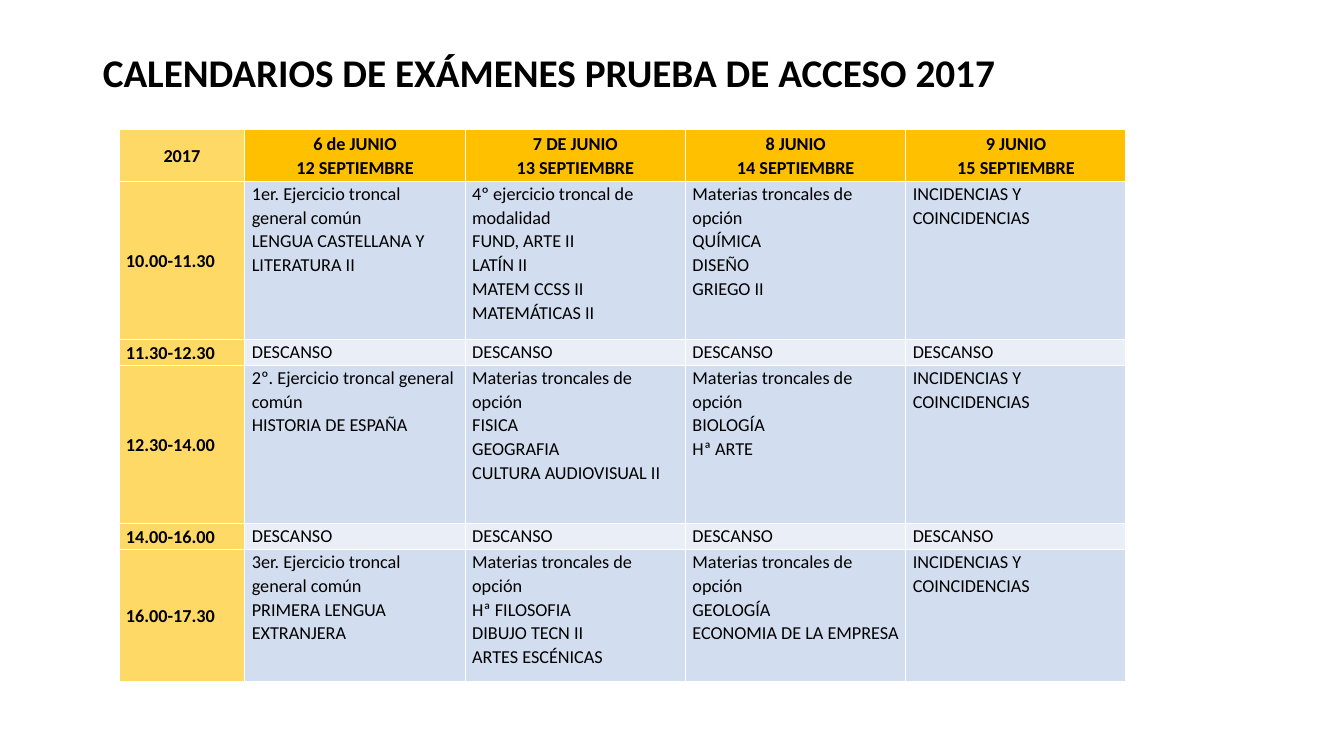
"""Build the 2017 exam calendar slide."""
from pptx import Presentation, util as u
from pptx.dml.color import RGBColor
from pptx.enum import text

HEADING = "CALENDARIOS DE EXÁMENES PRUEBA DE ACCESO 2017"
OPTION = "Materias troncales de opción"
INCIDENTS = ["INCIDENCIAS Y COINCIDENCIAS"]
BREAK = [["DESCANSO"]] * 4
DAYS = [
    ["6 de JUNIO", "12 SEPTIEMBRE"],
    ["7 DE JUNIO", "13 SEPTIEMBRE"],
    ["8 JUNIO", "14 SEPTIEMBRE"],
    ["9 JUNIO", "15 SEPTIEMBRE"],
]
CALENDAR = [
    ("2017", 2, DAYS),
    ("10.00-11.30", 6, [
        ["1er. Ejercicio troncal general común", "LENGUA CASTELLANA Y LITERATURA II"],
        ["4º ejercicio troncal de modalidad", "FUND, ARTE II", "LATÍN II",
         "MATEM CCSS II", "MATEMÁTICAS II"],
        [OPTION, "QUÍMICA", "DISEÑO", "GRIEGO II"],
        INCIDENTS,
    ]),
    ("11.30-12.30", 1, BREAK),
    ("12.30-14.00", 6, [
        ["2º. Ejercicio troncal general común", "HISTORIA DE ESPAÑA"],
        [OPTION, "FISICA", "GEOGRAFIA", "CULTURA AUDIOVISUAL II"],
        [OPTION, "BIOLOGÍA", "Hª ARTE"],
        INCIDENTS,
    ]),
    ("14.00-16.00", 1, BREAK),
    ("16.00-17.30", 5, [
        ["3er. Ejercicio troncal general común", "PRIMERA LENGUA EXTRANJERA"],
        [OPTION, "Hª FILOSOFIA", "DIBUJO TECN II", "ARTES ESCÉNICAS"],
        [OPTION, "GEOLOGÍA", "ECONOMIA DE LA EMPRESA"],
        INCIDENTS,
    ]),
]
COLUMN_SHARES = [4, 7, 7, 7, 7]
THEME = {
    "font": "Calibri", "title": 28, "body": 13, "ink": "000000",
    "hours": "FFD966", "days": "FFC000", "exam": "D2DEEF", "break": "EAEFF7",
}
LEFT, CENTER = text.PP_ALIGN.LEFT, text.PP_ALIGN.CENTER
TOP, MIDDLE = text.MSO_ANCHOR.TOP, text.MSO_ANCHOR.MIDDLE


def assign(target, **values):
    for name, value in values.items():
        setattr(target, name, value)


def write(frame, lines, size, bold, align, spacing):
    frame.text = "\n".join(lines)
    for line in frame.paragraphs:
        assign(line, alignment=align, line_spacing=spacing)
        for run in line.runs:
            assign(run.font, name=THEME["font"], size=u.Pt(THEME[size]), bold=bold)
            run.font.color.rgb = RGBColor.from_string(THEME["ink"])


def fill_cell(cell, lines, tone, bold, align, anchor):
    cell.fill.solid()
    cell.fill.fore_color.rgb = RGBColor.from_string(THEME[tone])
    assign(cell, vertical_anchor=anchor, margin_left=u.Inches(0.07),
           margin_right=u.Inches(0.07), margin_top=0, margin_bottom=0)
    write(cell.text_frame, lines, "body", bold, align, 1.07)


def add_heading(slide):
    heading = slide.shapes.title
    assign(heading, left=u.Inches(0.92), top=u.Inches(0.4),
           width=u.Inches(11.5), height=u.Inches(0.69))
    assign(heading.text_frame, vertical_anchor=MIDDLE, word_wrap=True,
           auto_size=text.MSO_AUTO_SIZE.NONE)
    write(heading.text_frame, [HEADING], "title", True, LEFT, 0.9)


def add_calendar(slide):
    width, height = u.Inches(9.99), u.Inches(5.48)
    calendar = slide.shapes.add_table(
        len(CALENDAR), len(COLUMN_SHARES), u.Inches(1.18), u.Inches(1.28), width, height).table
    for column, share in zip(calendar.columns, COLUMN_SHARES):
        column.width = int(width * share / sum(COLUMN_SHARES))
    total_lines = sum(lines for _, lines, _ in CALENDAR)
    for row, (hours, lines, entries) in enumerate(CALENDAR):
        calendar.rows[row].height = int(height * lines / total_lines)
        header = row == 0
        align = CENTER if header else LEFT
        tone = "days" if header else "break" if entries is BREAK else "exam"
        fill_cell(calendar.cell(row, 0), [hours], "hours", True, align, MIDDLE)
        for column, entry in enumerate(entries, 1):
            fill_cell(calendar.cell(row, column), entry, tone, header, align,
                      MIDDLE if header else TOP)


def main():
    deck = Presentation()
    assign(deck, slide_width=u.Inches(13.33), slide_height=u.Inches(7.5))
    slide = deck.slides.add_slide(deck.slide_layouts[5])
    add_heading(slide)
    add_calendar(slide)
    deck.save("out.pptx")


if __name__ == "__main__":
    main()
